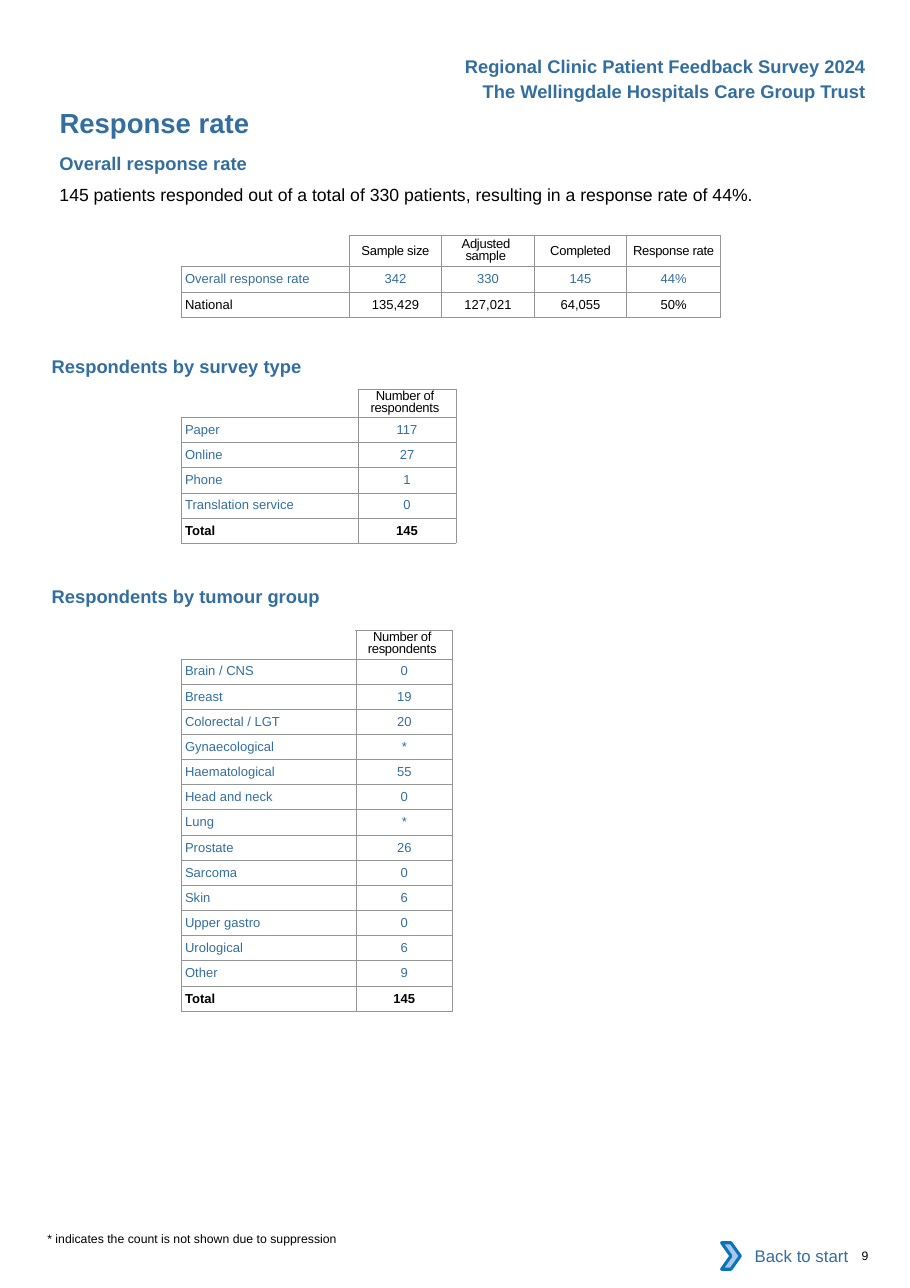
from lxml.etree import SubElement
from pptx import Presentation
from pptx.dml.color import RGBColor
from pptx.enum.shapes import MSO_SHAPE
from pptx.enum.text import MSO_ANCHOR, PP_ALIGN
from pptx.oxml.ns import qn
from pptx.util import Inches, Pt

COLORS = {
    "heading": "336E9F",
    "text": "000000",
    "border": "939598",
    "background": "FFFFFF",
    "chevron": "A8C7E9",
    "chevron_line": "0A74BB",
}
FONT = "Arial"
TABLE_LEFT = 1.65
TABLE_TEXT_SIZE = 8.5
RESPONDENTS_HEADER = ["", "Number of respondents"]
TWO_LINE_HEADERS = ("Adjusted sample", "Number of respondents")

OVERALL_ROWS = [
    ["", "Sample size", "Adjusted sample", "Completed", "Response rate"],
    ["Overall response rate", "342", "330", "145", "44%"],
    ["National", "135,429", "127,021", "64,055", "50%"],
]
SURVEY_TYPE_ROWS = [
    RESPONDENTS_HEADER,
    ["Paper", "117"],
    ["Online", "27"],
    ["Phone", "1"],
    ["Translation service", "0"],
    ["Total", "145"],
]
TUMOUR_GROUP_ROWS = [
    RESPONDENTS_HEADER,
    ["Brain / CNS", "0"],
    ["Breast", "19"],
    ["Colorectal / LGT", "20"],
    ["Gynaecological", "*"],
    ["Haematological", "55"],
    ["Head and neck", "0"],
    ["Lung", "*"],
    ["Prostate", "26"],
    ["Sarcoma", "0"],
    ["Skin", "6"],
    ["Upper gastro", "0"],
    ["Urological", "6"],
    ["Other", "9"],
    ["Total", "145"],
]


def rgb(name):
    return RGBColor.from_string(COLORS[name])


def write(paragraph, text, size, color="text", bold=False,
          align=PP_ALIGN.LEFT, tracking=0):
    """Add one formatted run; tracking is in hundredths of a point."""
    paragraph.alignment = align
    run = paragraph.add_run()
    run.text = text
    font = run.font
    font.name, font.size, font.bold = FONT, Pt(size), bold
    font.color.rgb = rgb(color)
    if tracking:
        font._element.set("spc", str(tracking))


def clear_margins(target):
    """Remove the insets of a text frame or a table cell."""
    target.margin_left = target.margin_right = 0
    target.margin_top = target.margin_bottom = 0


def add_title(slide, text):
    title = slide.shapes.title
    title.left, title.top = Inches(0.54), Inches(0.96)
    title.width, title.height = Inches(4.13), Inches(0.3)
    frame = title.text_frame
    clear_margins(frame)
    frame.vertical_anchor = MSO_ANCHOR.TOP
    write(frame.paragraphs[0], text, 18, "heading", True)


def add_text(slide, left, top, width, height, text, size, **style):
    box = slide.shapes.add_textbox(
        Inches(left), Inches(top), Inches(width), Inches(height))
    frame = box.text_frame
    frame.word_wrap = True
    clear_margins(frame)
    write(frame.paragraphs[0], text, size, **style)


def add_heading(slide, left, top, text, width=4.13, align=PP_ALIGN.LEFT):
    add_text(slide, left, top, width, 0.2, text, 12,
             color="heading", bold=True, align=align)


def set_borders(cell, visible_sides):
    properties = cell._tc.get_or_add_tcPr()
    for side in "LRTB":
        line = SubElement(properties, qn(f"a:ln{side}"), w=str(Pt(0.5)))
        if side in visible_sides:
            fill = SubElement(line, qn("a:solidFill"))
            SubElement(fill, qn("a:srgbClr"), val=COLORS["border"])
        else:
            SubElement(line, qn("a:noFill"))


def fill_cell(cell, text, row, column, color, bold):
    clear_margins(cell)
    cell.vertical_anchor = MSO_ANCHOR.MIDDLE
    set_borders(cell, "LRTB" if text else "RB")
    cell.fill.background()
    paragraph = cell.text_frame.paragraphs[0]
    if not text:
        SubElement(paragraph._p, qn("a:endParaRPr"),
                   sz=str(int(TABLE_TEXT_SIZE * 100)))
        return
    if column == 0:
        cell.margin_left = Inches(0.03)
    if text in TWO_LINE_HEADERS:
        cell.margin_left, cell.margin_right = Inches(0.06), Inches(0.1)
        paragraph.line_spacing = Pt(7.6)
    write(paragraph, text, TABLE_TEXT_SIZE, color, bold,
          PP_ALIGN.CENTER if column else PP_ALIGN.LEFT,
          tracking=0 if row else -20)


def add_data_table(slide, top, rows, column_widths, header_height, height):
    frame = slide.shapes.add_table(
        len(rows), len(column_widths), Inches(TABLE_LEFT), Inches(top),
        Inches(sum(column_widths)), Inches(height))
    table = frame.table
    table.first_row = table.horz_banding = False
    for column, width in zip(table.columns, column_widths):
        column.width = Inches(width)
    row_height = (height - header_height) / (len(rows) - 1)
    for i, values in enumerate(rows):
        table.rows[i].height = Inches(row_height if i else header_height)
        plain = i == 0 or values[0] in ("National", "Total")
        for j, text in enumerate(values):
            fill_cell(table.cell(i, j), text, i, j,
                      "text" if plain else "heading", values[0] == "Total")


def add_shape(slide, preset, left, top, width, height, fill):
    shape = slide.shapes.add_shape(
        preset, Inches(left), Inches(top), Inches(width), Inches(height))
    shape.shadow.inherit = False
    shape.fill.solid()
    shape.fill.fore_color.rgb = rgb(fill)
    return shape


def add_back_button(slide):
    button = add_shape(slide, MSO_SHAPE.RECTANGLE,
                       6.62, 11.19, 1.18, 0.42, "background")
    button.line.fill.background()
    button.text_frame.vertical_anchor = MSO_ANCHOR.MIDDLE
    write(button.text_frame.paragraphs[0], "Back to start", 11, "heading",
          align=PP_ALIGN.RIGHT)
    chevron = add_shape(slide, MSO_SHAPE.CHEVRON,
                        6.55, 11.28, 0.17, 0.24, "chevron")
    chevron.line.color.rgb = rgb("chevron_line")
    chevron.line.width = Pt(2)


def main():
    presentation = Presentation()
    presentation.slide_width = Inches(8.26)
    presentation.slide_height = Inches(11.69)
    slide = presentation.slides.add_slide(presentation.slide_layouts[5])

    add_heading(slide, 3.36, 0.5, "Regional Clinic Patient Feedback Survey 2024",
                4.5, PP_ALIGN.RIGHT)
    add_heading(slide, 3.36, 0.73, "The Wellingdale Hospitals Care Group Trust",
                4.5, PP_ALIGN.RIGHT)
    add_title(slide, "Response rate")

    add_heading(slide, 0.54, 1.38, "Overall response rate")
    add_text(slide, 0.54, 1.67, 7.2, 0.19,
             "145 patients responded out of a total of 330 patients, "
             "resulting in a response rate of 44%.", 11.5)
    add_data_table(slide, 2.14, OVERALL_ROWS,
                   [1.52, 0.84, 0.84, 0.84, 0.85], 0.28, 0.74)

    add_heading(slide, 0.47, 3.22, "Respondents by survey type")
    add_data_table(slide, 3.53, SURVEY_TYPE_ROWS, [1.6, 0.89], 0.26, 1.4)

    add_heading(slide, 0.47, 5.31, "Respondents by tumour group")
    add_data_table(slide, 5.72, TUMOUR_GROUP_ROWS, [1.58, 0.88], 0.26, 3.46)

    add_text(slide, 0.43, 11.18, 4, 0.13,
             "* indicates the count is not shown due to suppression", 8)
    add_back_button(slide)
    add_text(slide, 7.82, 11.33, 0.4, 0.13, "9", 8)
    presentation.save("out.pptx")


if __name__ == "__main__":
    main()
